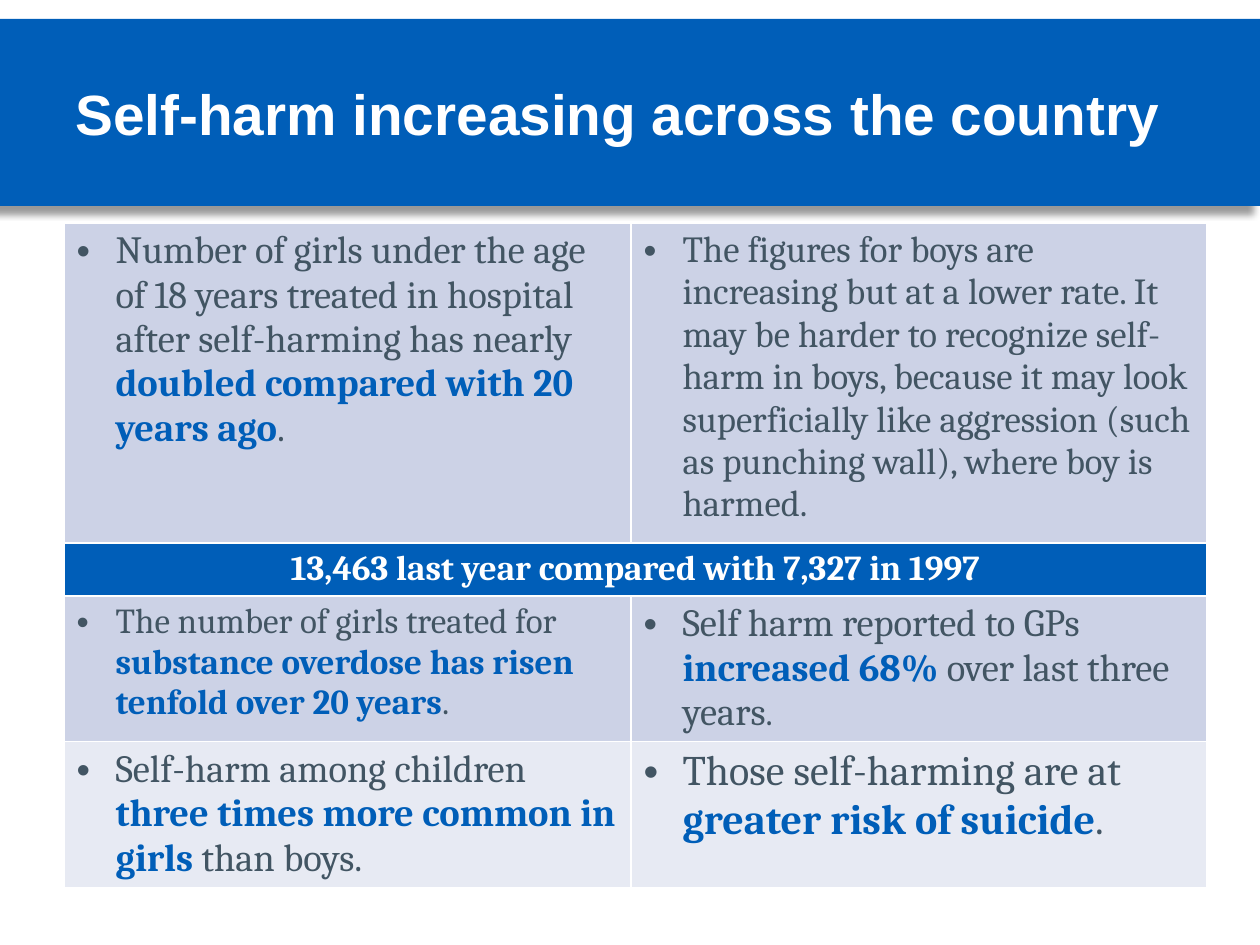
"""Build a slide with a title band and a table of self-harm figures."""
from lxml.etree import SubElement
from pptx import Presentation
from pptx.dml.color import RGBColor
from pptx.enum.shapes import MSO_SHAPE as Shape
from pptx.enum.text import MSO_ANCHOR as Anchor, PP_ALIGN as Align
from pptx.oxml.ns import qn
from pptx.util import Pt

PX = 914400 // 126
WHITE = RGBColor(0xFF, 0xFF, 0xFF)
BLUE = RGBColor(0x00, 0x5E, 0xB8)
SLATE = RGBColor(0x42, 0x55, 0x63)
LAVENDER = RGBColor(0xCC, 0xD2, 0xE6)
PALE = RGBColor(0xE7, 0xEA, 0xF3)


def style(span, size, color, bold, name="Cambria"):
    span.font.name = name
    span.font.size = Pt(size)
    span.font.bold = bold
    span.font.color.rgb = color


def add_bullet(para):
    props = para._p.get_or_add_pPr()
    props.set("marL", str(39 * PX))
    props.set("indent", str(-39 * PX))
    SubElement(props, qn("a:buFont"), typeface="Arial")
    SubElement(props, qn("a:buChar"), char="•")


deck = Presentation()
deck.slide_width, deck.slide_height = 1260 * PX, 945 * PX
page = deck.slides.add_slide(deck.slide_layouts[5])

band = page.shapes.add_shape(Shape.RECTANGLE, 0, 19 * PX, 1260 * PX, 187 * PX)
band.fill.solid()
band.fill.fore_color.rgb = BLUE
band.line.fill.background()
band.shadow.inherit = False
effects = band._element.spPr.find(qn("a:effectLst"))
shadow = SubElement(effects, qn("a:outerShdw"), blurRad=str(Pt(4)), dist=str(Pt(6)),
                    dir="8100000", algn="tr", rotWithShape="0")
shade = SubElement(shadow, qn("a:srgbClr"), val="000000")
SubElement(shade, qn("a:alpha"), val="40000")

title = page.shapes.title
title._element.addprevious(band._element)
title.left, title.top, title.width, title.height = 63 * PX, 34 * PX, 1134 * PX, 157 * PX
title.text_frame.text = "Self-harm increasing across the country"
title.text_frame.vertical_anchor = Anchor.MIDDLE
heading = title.text_frame.paragraphs[0]
heading.alignment = Align.LEFT
style(heading.runs[0], 32.4, WHITE, True, "Arial")

widths = [567, 576]
heights = [320, 48, 122, 122]
table = page.shapes.add_table(4, 2, 64 * PX, 223 * PX, sum(widths) * PX, sum(heights) * PX).table
table.first_row = False
for column, width in zip(table.columns, widths):
    column.width = width * PX
for row, height in zip(table.rows, heights):
    row.height = height * PX

banner = table.cell(1, 0)
banner.merge(table.cell(1, 1))
banner.fill.solid()
banner.fill.fore_color.rgb = BLUE
banner.text_frame.text = "13,463 last year compared with 7,327 in 1997"
para = banner.text_frame.paragraphs[0]
para.alignment = Align.CENTER
style(para.runs[0], 20, WHITE, True)

facts = [
    (0, 0, LAVENDER, [
        ("Number of girls under the age of 18 years treated in hospital after "
         "self-harming has nearly ", 22, False),
        ("doubled compared with 20 years ago", 22, True), (".", 22, False)]),
    (0, 1, LAVENDER, [
        ("The figures for boys are increasing but at a lower rate. It may be harder to "
         "recognize self-harm in boys, because it may look superficially like aggression "
         "(such as punching wall), where boy is harmed.", 21, False)]),
    (2, 0, LAVENDER, [
        ("The number of girls treated for ", 20, False),
        ("substance overdose has risen tenfold over 20 years", 20, True), (".", 20, False)]),
    (2, 1, LAVENDER, [
        ("Self harm reported to GPs ", 22, False), ("increased 68% ", 22, True),
        ("over last three years", 22, False), (".", 20, False)]),
    (3, 0, PALE, [
        ("Self-harm among children ", 22, False),
        ("three times more common in girls ", 22, True), ("than boys.", 22, False)]),
    (3, 1, PALE, [
        ("Those self-harming are at ", 24, False),
        ("greater risk of suicide", 24, True), (".", 24, False)]),
]
for row, column, fill, parts in facts:
    cell = table.cell(row, column)
    cell.fill.solid()
    cell.fill.fore_color.rgb = fill
    para = cell.text_frame.paragraphs[0]
    add_bullet(para)
    for text, size, bold in parts:
        span = para.add_run()
        span.text = text
        style(span, size, BLUE if bold else SLATE, bold)

deck.save("out.pptx")
